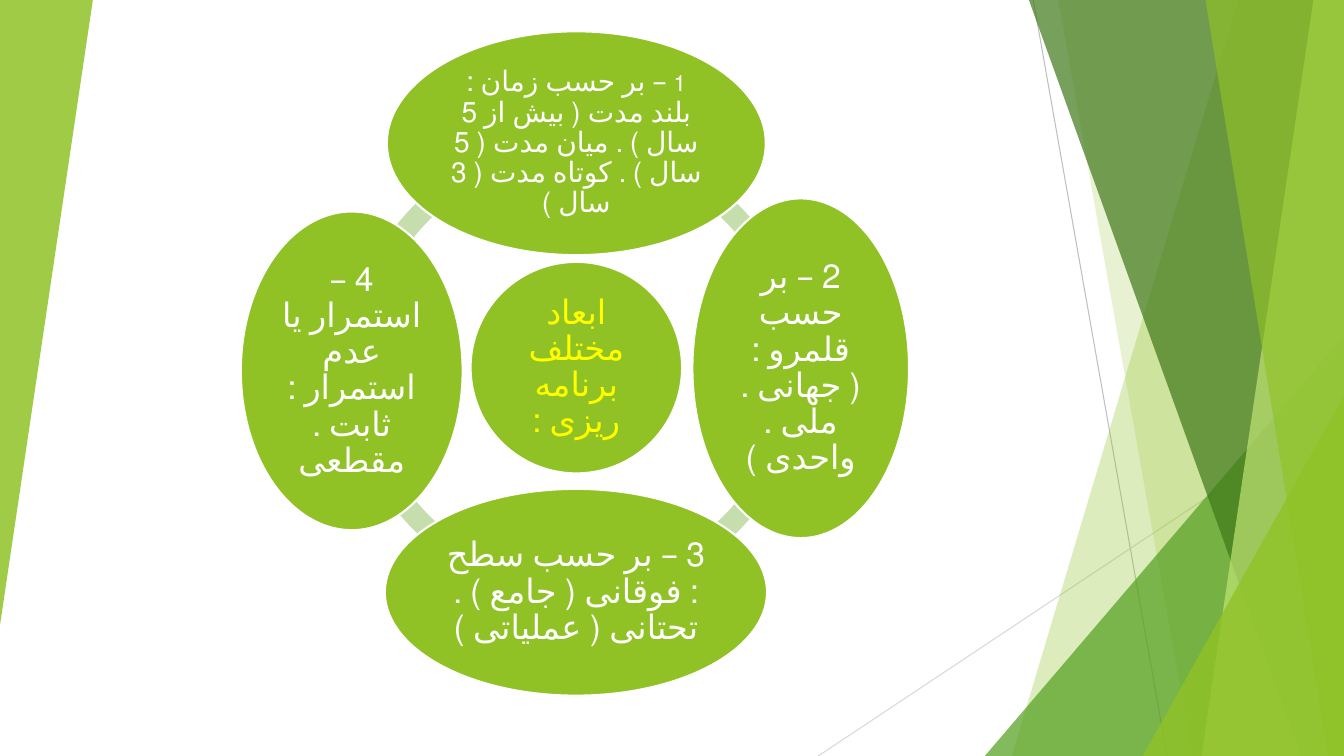
from dataclasses import dataclass

from lxml import etree
from pptx import Presentation
from pptx.dml.color import RGBColor
from pptx.enum.shapes import MSO_CONNECTOR, MSO_SHAPE
from pptx.enum.text import MSO_ANCHOR, PP_ALIGN
from pptx.oxml.ns import qn
from pptx.util import Cm, Pt

STRAIGHT = MSO_CONNECTOR.STRAIGHT
TRIANGLE = MSO_SHAPE.ISOSCELES_TRIANGLE
BLOCK_ARC = MSO_SHAPE.BLOCK_ARC
OVAL = MSO_SHAPE.OVAL
MIDDLE = MSO_ANCHOR.MIDDLE
CENTER = PP_ALIGN.CENTER

FONT = "Roboto"
SCRIPT_FONT = "+mn-cs"
LANGUAGE = "fa-IR"
WIDTH, HEIGHT = 33.87, 19.05
COLORS = {
    "lime": "90C226",
    "green": "54A021",
    "forest": "3F7819",
    "pale": "C0E474",
    "arc": "C6DDAD",
    "grey": "BFBFBF",
    "light_grey": "D9D9D9",
    "white": "FFFFFF",
    "yellow": "FFFF00",
}


@dataclass
class Line:
    start: tuple[float, float]
    end: tuple[float, float]
    color: str


@dataclass
class Panel:
    """Full-height band from a slanted left side to the right slide edge."""
    top_x: float
    bottom_x: float
    color: str
    opacity: int


@dataclass
class Triangle:
    box: tuple[float, float, float, float]
    color: str
    opacity: int
    rotation: int = 0


@dataclass
class Bubble:
    box: tuple[float, float, float, float]
    runs: list[tuple[str, int]]
    color: str = "white"
    inset: float = 0.08


DECOR = [
    Line((26.04, 0), (29.41, HEIGHT), "grey"),
    Line((WIDTH, 10.24), (20.62, HEIGHT), "light_grey"),
    Panel(31.2, 25.5, "lime", 30),
    Panel(26.67, 30.05, "lime", 20),
    Triangle((24.82, 8.46, 9.05, 10.59), "green", 72),
    Panel(25.93, 32.79, "forest", 70),
    Panel(33.1, 30.28, "pale", 70),
    Panel(30.38, 33.48, "lime", 65),
    Triangle((28.8, 9.98, 5.07, 9.07), "lime", 80),
    Triangle((0, 0, 2.34, 15.75), "lime", 85, 180),
]

RING_BOX = (8.74, 3.48, 11.58, 11.58)
RING_THICKNESS = 0.046
RING_ANGLES = [(107.47, 162), (54, 107.47), (0, 54), (162, 0)]

BUBBLES = [
    Bubble((11.86, 6.6, 5.33, 5.33), [("ابعاد مختلف برنامه ریزی :", 24)], "yellow"),
    Bubble(
        (9.75, 0.79, 9.55, 5.64),
        [("1", 16),
         (" – بر حسب زمان : بلند مدت ( بیش از 5 سال ) . میان مدت ( 5 سال ) . "
          "کوتاه مدت ( 3 سال )", 20)],
        inset=0.05,
    ),
    Bubble((17.45, 5, 5.46, 8.56),
           [("2 – بر حسب قلمرو : ( جهانی . ملی . واحدی )", 24)]),
    Bubble((9.7, 12.32, 9.63, 5.21),
           [("3 – بر حسب سطح : فوقانی ( جامع ) . تحتانی ( عملیاتی )", 24)]),
    Bubble((6.07, 5.33, 5.59, 8.03),
           [("4 – استمرار یا عدم استمرار : ثابت . مقطعی", 24)]),
]


def rgb(name: str) -> RGBColor:
    return RGBColor.from_string(COLORS[name])


def paint(sp, color: str, opacity: int = 100) -> None:
    sp.shadow.inherit = False
    sp.fill.solid()
    sp.fill.fore_color.rgb = rgb(color)
    sp.line.fill.background()
    if opacity < 100:
        clr = sp._element.spPr.find(qn("a:solidFill"))[0]
        etree.SubElement(clr, qn("a:alpha")).set("val", str(opacity * 1000))


def add_preset(s, kind, box: tuple[float, float, float, float]):
    return s.shapes.add_shape(kind, *(Cm(v) for v in box))


def draw_line(s, line: Line) -> None:
    cx = s.shapes.add_connector(STRAIGHT, *(Cm(v) for v in line.start + line.end))
    cx.line.color.rgb = rgb(line.color)
    cx.line.width = Pt(0.75)
    etree.SubElement(cx._element.spPr, qn("a:effectLst"))


def draw_panel(s, panel: Panel) -> None:
    builder = s.shapes.build_freeform(Cm(panel.top_x), 0)
    corners = [(WIDTH, 0), (WIDTH, HEIGHT), (panel.bottom_x, HEIGHT)]
    builder.add_line_segments([(Cm(x), Cm(y)) for x, y in corners], close=True)
    paint(builder.convert_to_shape(), panel.color, panel.opacity)


def draw_triangle(s, triangle: Triangle) -> None:
    sp = add_preset(s, TRIANGLE, triangle.box)
    sp.adjustments[0] = 1
    sp.rotation = triangle.rotation
    paint(sp, triangle.color, triangle.opacity)


def draw_arc(s, start: float, end: float) -> None:
    sp = add_preset(s, BLOCK_ARC, RING_BOX)
    for i, value in enumerate((start, end, RING_THICKNESS)):
        sp.adjustments[i] = value
    paint(sp, "arc")


def set_script(r) -> None:
    """Mark a run as Persian and give its right-to-left letters a font."""
    rPr = r._r.get_or_add_rPr()
    rPr.set("lang", LANGUAGE)
    etree.SubElement(rPr, qn("a:cs")).set("typeface", SCRIPT_FONT)


def draw_bubble(s, bubble: Bubble) -> None:
    sp = add_preset(s, OVAL, bubble.box)
    paint(sp, "lime")
    sp.line.color.rgb = rgb("white")
    sp.line.width = Pt(1.5)
    tf = sp.text_frame
    tf.word_wrap = True
    tf.vertical_anchor = MIDDLE
    tf.margin_left = tf.margin_right = Cm(bubble.inset)
    tf.margin_top = tf.margin_bottom = Cm(bubble.inset)
    p = tf.paragraphs[0]
    p.alignment = CENTER
    p.line_spacing = 0.9
    p._p.get_or_add_pPr().set("rtl", "1")
    for text, size in bubble.runs:
        r = p.add_run()
        r.text = text
        r.font.name = FONT
        r.font.size = Pt(size)
        r.font.color.rgb = rgb(bubble.color)
        set_script(r)


def main() -> None:
    prs = Presentation()
    prs.slide_width, prs.slide_height = Cm(WIDTH), Cm(HEIGHT)
    s = prs.slides.add_slide(prs.slide_layouts[6])
    draw = {Line: draw_line, Panel: draw_panel, Triangle: draw_triangle}
    for item in DECOR:
        draw[type(item)](s, item)
    for start, end in RING_ANGLES:
        draw_arc(s, start, end)
    for bubble in BUBBLES:
        draw_bubble(s, bubble)
    prs.save("out.pptx")


if __name__ == "__main__":
    main()
